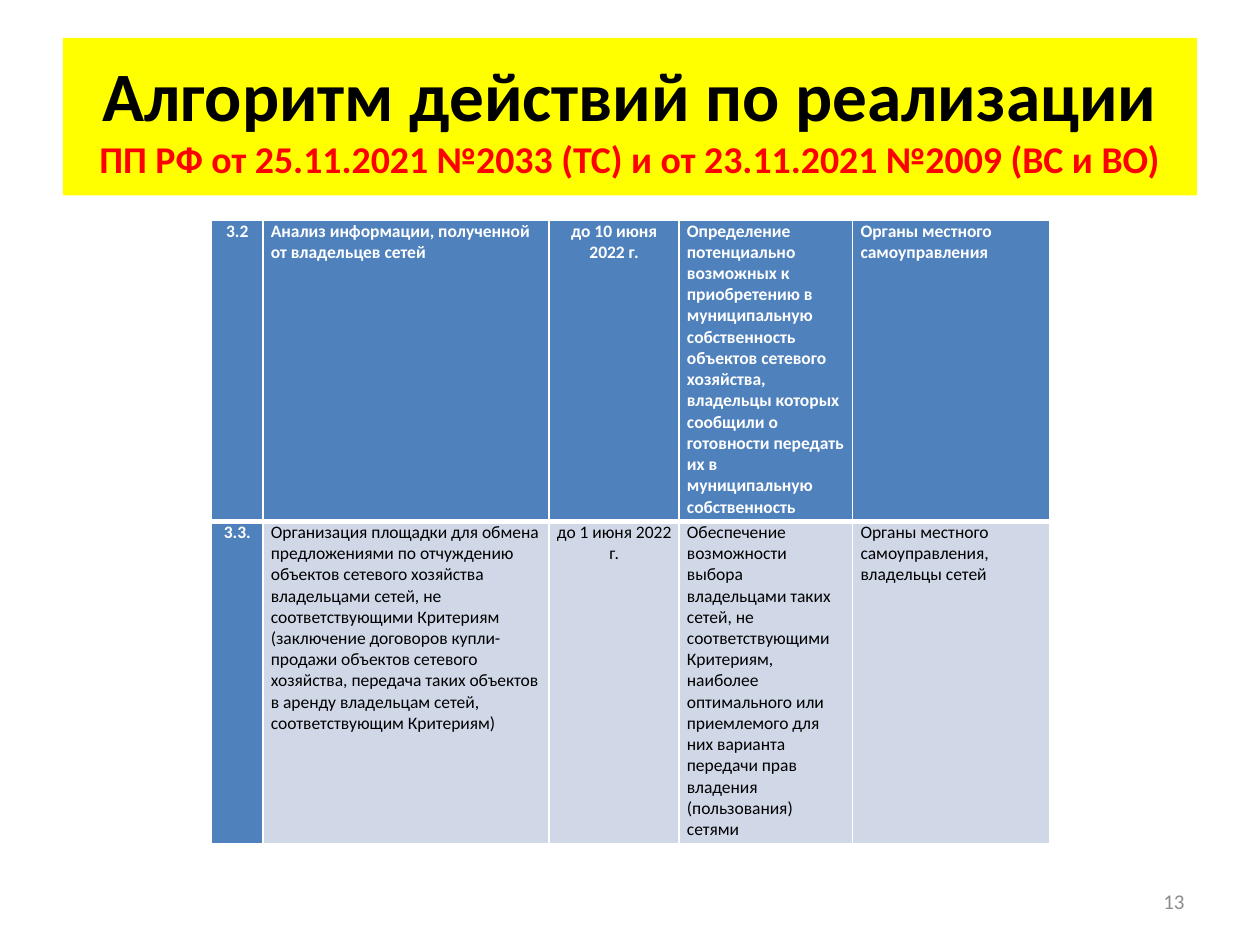
from lxml import etree
from pptx import Presentation
from pptx import util as u
from pptx.dml.color import RGBColor
from pptx.enum import shapes, text
from pptx.oxml.ns import qn

THEME = dict(
    font="Calibri", title_size=39.6, subtitle_size=21.6, table_size=10, number_size=12,
    banner="FFFF00", black="000000", red="FF0000", white="FFFFFF", grey="8C8C8C",
    accent="4F81BD", band="D0D8E8",
)
LEFT, CENTER, RIGHT = text.PP_ALIGN.LEFT, text.PP_ALIGN.CENTER, text.PP_ALIGN.RIGHT

TITLE = "Алгоритм действий по реализации"
SUBTITLE = "ПП РФ от 25.11.2021 №2033 (ТС) и от 23.11.2021 №2009 (ВС и ВО)"
PAGE_NUMBER = "13"

# Number, action, deadline, result, responsible; each line is a paragraph.
STEPS = [
    ("3.2",
     "Анализ информации, полученной от владельцев сетей",
     "до 10 июня 2022 г.",
     "Определение потенциально возможных к приобретению в муниципальную собственность "
     "объектов сетевого хозяйства, владельцы которых сообщили о готовности передать их "
     "в муниципальную собственность",
     "Органы местного самоуправления"),
    ("3.3.",
     "Организация площадки для обмена предложениями по отчуждению объектов сетевого "
     "хозяйства владельцами сетей, не соответствующими Критериям (заключение договоров "
     "купли-продажи объектов сетевого хозяйства, передача таких объектов в аренду "
     "владельцам сетей, соответствующим Критериям)",
     "до 1 июня 2022 г.",
     "Обеспечение возможности выбора владельцами таких сетей, не соответствующими "
     "Критериям, наиболее оптимального или приемлемого для них варианта передачи прав "
     "владения (пользования) сетями",
     "Органы местного самоуправления,\nвладельцы сетей"),
]
COLUMN_WIDTHS = [29.4, 163.5, 74.3, 99.2, 112.4]
COLUMN_ALIGN = [CENTER, LEFT, CENTER, LEFT, LEFT]
ROW_HEIGHTS = [172.2, 184.2]


def rgb(name):
    return RGBColor.from_string(THEME[name])


def write(paragraph, words, size, color, bold=False, align=LEFT):
    paragraph.alignment = align
    run = paragraph.add_run()
    run.text = words
    run.font.name = THEME["font"]
    run.font.size = u.Pt(THEME[size])
    run.font.bold = bold
    run.font.color.rgb = rgb(color)


def set_borders(cell, **widths):
    """Draw white cell edges; keys are L, R, T, B and values are points."""
    properties = cell._tc.get_or_add_tcPr()
    for position, (side, width) in enumerate(widths.items()):
        line = etree.Element(qn(f"a:ln{side}"), w=str(u.Pt(width)))
        fill = etree.SubElement(line, qn("a:solidFill"))
        etree.SubElement(fill, qn("a:srgbClr"), val=THEME["white"])
        properties.insert(position, line)


def add_banner(slide):
    banner = slide.shapes.add_shape(shapes.MSO_SHAPE.RECTANGLE,
                                    u.Pt(36), u.Pt(21.6), u.Pt(648), u.Pt(90))
    banner.shadow.inherit = False
    banner.fill.solid()
    banner.fill.fore_color.rgb = rgb("banner")
    banner.line.fill.background()
    frame = banner.text_frame
    frame.word_wrap = True
    frame.vertical_anchor = text.MSO_ANCHOR.MIDDLE
    heading = frame.paragraphs[0]
    write(heading, TITLE, "title_size", "black", bold=True, align=CENTER)
    heading.add_line_break()
    write(heading, SUBTITLE, "subtitle_size", "red", bold=True, align=CENTER)


def add_steps(slide):
    steps = slide.shapes.add_table(
        len(STEPS), len(COLUMN_WIDTHS), u.Pt(120.9), u.Pt(126),
        u.Pt(sum(COLUMN_WIDTHS)), u.Pt(sum(ROW_HEIGHTS))).table
    for column, width in zip(steps.columns, COLUMN_WIDTHS):
        column.width = u.Pt(width)
    for r, (step, height) in enumerate(zip(STEPS, ROW_HEIGHTS)):
        steps.rows[r].height = u.Pt(height)
        for c, (words, align) in enumerate(zip(step, COLUMN_ALIGN)):
            cell = steps.cell(r, c)
            cell.margin_left = cell.margin_right = u.Pt(4.5)
            cell.margin_top = cell.margin_bottom = 0
            emphasized = r == 0 or c == 0
            cell.fill.solid()
            cell.fill.fore_color.rgb = rgb("accent" if emphasized else "band")
            set_borders(cell, L=1, R=1, T=1 if r == 0 else 3, B=3 if r == 0 else 1)
            for i, line in enumerate(words.split("\n")):
                frame = cell.text_frame
                paragraph = frame.add_paragraph() if i else frame.paragraphs[0]
                write(paragraph, line, "table_size", "white" if emphasized else "black",
                      bold=emphasized, align=align)


def add_page_number(slide):
    frame = slide.shapes.add_textbox(u.Pt(516), u.Pt(500.5), u.Pt(168), u.Pt(28.75)).text_frame
    frame.word_wrap = True
    frame.vertical_anchor = text.MSO_ANCHOR.MIDDLE
    write(frame.paragraphs[0], PAGE_NUMBER, "number_size", "grey", align=RIGHT)


def main():
    deck = Presentation()
    deck.slide_width, deck.slide_height = u.Pt(720), u.Pt(540)
    slide = deck.slides.add_slide(deck.slide_layouts[6])
    add_page_number(slide)
    add_banner(slide)
    add_steps(slide)
    deck.save("out.pptx")


if __name__ == "__main__":
    main()
